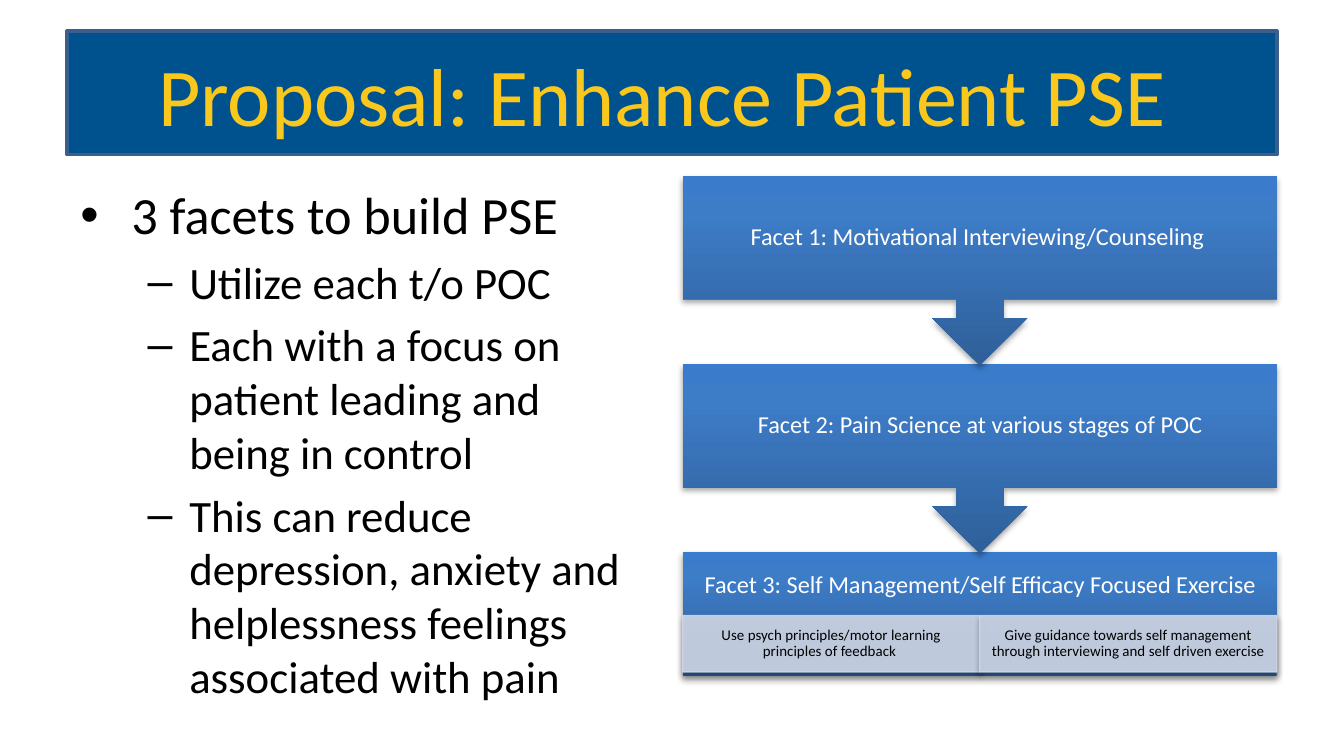
"""Build a slide proposing three facets for enhancing patient PSE."""
from typing import NamedTuple

from lxml import etree
from pptx import Presentation
from pptx.dml.color import RGBColor
from pptx.enum.shapes import MSO_SHAPE
from pptx.enum.text import MSO_ANCHOR, PP_ALIGN
from pptx.oxml.ns import qn
from pptx.util import Inches, Pt

RECTANGLE = MSO_SHAPE.RECTANGLE
CALLOUT = MSO_SHAPE.UP_ARROW_CALLOUT
CENTER, LEFT = PP_ALIGN.CENTER, PP_ALIGN.LEFT
MIDDLE, TOP = MSO_ANCHOR.MIDDLE, MSO_ANCHOR.TOP

FONT = "Calibri"
SLIDE_WIDTH = 10
SLIDE_HEIGHT = SLIDE_WIDTH * 9 / 16
GRADIENT = ((0, "2F5F99"), (80, "3D7CC7"), (100, "3A7CCB"))
DETAIL_COLOR = "D0D8E8"
FLOW_LEFT, FLOW_TOP, FLOW_WIDTH = 5.08, 1.31, 4.42
STEP, CALLOUT_HEIGHT, BOX_HEIGHT = 1.4, 1.41, 0.92
DETAIL_TOP, DETAIL_HEIGHT = 4.58, 0.42


class Box(NamedTuple):
    """A rectangle in inches."""
    left: float
    top: float
    width: float
    height: float


class Bullet(NamedTuple):
    """One bulleted line of the body."""
    text: str
    level: int = 1


class BulletStyle(NamedTuple):
    """The look of one bullet level."""
    mark: str
    size: float
    margin: float
    hanging: float


STYLES = (BulletStyle("•", 28, 0.38, 0.38), BulletStyle("–", 24, 0.81, 0.31))
BULLETS = (
    Bullet("3 facets to build PSE", 0),
    Bullet("Utilize each t/o POC"),
    Bullet("Each with a focus on patient leading and being in control"),
    Bullet("This can reduce depression, anxiety and helplessness feelings associated with pain"),
)
FACETS = (
    "Facet 1: Motivational Interviewing/Counseling ",
    "Facet 2: Pain Science at various stages of POC",
    "Facet 3: Self Management/Self Efficacy Focused Exercise",
)
DETAILS = (
    "Use psych principles/motor learning principles of feedback ",
    "Give guidance towards self management through interviewing and self driven exercise",
)


def color(value: str) -> RGBColor:
    """Turn a hex string into a colour."""
    return RGBColor.from_string(value)


def lengths(box: Box) -> list:
    """Give the sides of a box as lengths."""
    return [Inches(side) for side in box]


def add_shape(slide, kind, box: Box):
    """Add a preset shape without a shadow."""
    shape = slide.shapes.add_shape(kind, *lengths(box))
    shape.shadow.inherit = False
    return shape


def add_shadow(shape) -> None:
    """Give a shape a soft shadow below it."""
    effects = shape.element.spPr.find(qn("a:effectLst"))
    shadow = etree.SubElement(effects, qn("a:outerShdw"), blurRad=str(Pt(3.1)),
                              dist=str(Pt(1.8)), dir="5400000", rotWithShape="0")
    black = etree.SubElement(shadow, qn("a:srgbClr"), val="000000")
    etree.SubElement(black, qn("a:alpha"), val="35000")


def add_gradient_shape(slide, kind, box: Box, rotation: float = 0) -> None:
    """Add a shape with the vertical blue gradient."""
    shape = add_shape(slide, kind, box)
    shape.rotation = rotation
    shape.line.fill.background()
    shape.fill.gradient()
    shape.fill.gradient_angle = 90
    gradient = shape.element.spPr.find(qn("a:gradFill"))
    gradient.set("rotWithShape", "0")
    stops = gradient.find(qn("a:gsLst"))
    for stop in list(stops):
        stops.remove(stop)
    for position, value in GRADIENT:
        stop = etree.SubElement(stops, qn("a:gs"), pos=str(position * 1000))
        etree.SubElement(stop, qn("a:srgbClr"), val=value)
    add_shadow(shape)


def set_bullet(paragraph, style: BulletStyle) -> None:
    """Give a paragraph its bullet and hanging indent."""
    properties = paragraph._p.get_or_add_pPr()
    properties.set("marL", str(Inches(style.margin)))
    properties.set("indent", str(-Inches(style.hanging)))
    etree.SubElement(properties, qn("a:buFont"), typeface="Arial")
    etree.SubElement(properties, qn("a:buChar"), char=style.mark)


def write(paragraph, text: str, *, size: float, fill: str = "000000",
          align=CENTER, spacing: float = 1.0) -> None:
    """Write formatted text into a paragraph."""
    paragraph.alignment = align
    paragraph.line_spacing = spacing
    run = paragraph.add_run()
    run.text = text
    run.font.name = FONT
    run.font.size = Pt(size)
    run.font.color.rgb = color(fill)


def set_frame(shape, inset_x: float = 0.1, inset_y: float = 0.05, anchor=MIDDLE):
    """Set wrapping, insets and anchor, and return the text frame."""
    frame = shape.text_frame
    frame.word_wrap = True
    frame.margin_left = frame.margin_right = Inches(inset_x)
    frame.margin_top = frame.margin_bottom = Inches(inset_y)
    frame.vertical_anchor = anchor
    return frame


def add_title(slide) -> None:
    """Add the title bar and its text."""
    bar = add_shape(slide, RECTANGLE, Box(0.5, 0.23, 9, 0.92))
    bar.fill.solid()
    bar.fill.fore_color.rgb = color("00528F")
    bar.line.color.rgb = color("3A5F8C")
    bar.line.width = Pt(2)
    title = slide.shapes.add_textbox(*lengths(Box(0.5, 0.23, 9, 0.94)))
    write(set_frame(title).paragraphs[0], "Proposal: Enhance Patient PSE ",
          size=44, fill="FAC71C")


def add_body(slide) -> None:
    """Add the bulleted list."""
    body = slide.shapes.add_textbox(*lengths(Box(0.5, FLOW_TOP, 4.42, 3.71)))
    frame = set_frame(body, anchor=TOP)
    for index, bullet in enumerate(BULLETS):
        style = STYLES[bullet.level]
        paragraph = frame.add_paragraph() if index else frame.paragraphs[0]
        paragraph.level = bullet.level
        set_bullet(paragraph, style)
        paragraph.space_before = Pt(style.size * 0.2 if index else 0)
        write(paragraph, bullet.text, size=style.size, align=LEFT)


def add_facet(slide, index: int) -> None:
    """Add one step of the flow; the last one is a plain box."""
    last = index == len(FACETS) - 1
    top = FLOW_TOP + index * STEP
    height = BOX_HEIGHT if last else CALLOUT_HEIGHT
    add_gradient_shape(slide, RECTANGLE if last else CALLOUT,
                       Box(FLOW_LEFT, top, FLOW_WIDTH, height), 0 if last else 180)
    label = slide.shapes.add_textbox(
        *lengths(Box(FLOW_LEFT, top, FLOW_WIDTH, 0.5 if last else BOX_HEIGHT)))
    write(set_frame(label, inset_y=0.1).paragraphs[0], FACETS[index],
          size=13, fill="FFFFFF", spacing=0.9)


def add_detail(slide, index: int) -> None:
    """Add one pale box under the last facet."""
    width = FLOW_WIDTH / len(DETAILS)
    shape = add_shape(slide, RECTANGLE,
                      Box(FLOW_LEFT + index * width, DETAIL_TOP, width, DETAIL_HEIGHT))
    shape.line.width = Pt(0.75)
    for fill in (shape.fill, shape.line.fill):
        fill.solid()
        fill.fore_color.rgb = color(DETAIL_COLOR)
    for tint in shape.element.spPr.iter(qn("a:srgbClr")):
        etree.SubElement(tint, qn("a:alpha"), val="90000")
    add_shadow(shape)
    write(set_frame(shape, 0.06, 0.01).paragraphs[0], DETAILS[index], size=8, spacing=0.9)


def main() -> None:
    """Build and save the presentation."""
    presentation = Presentation()
    presentation.slide_width = Inches(SLIDE_WIDTH)
    presentation.slide_height = Inches(SLIDE_HEIGHT)
    slide = presentation.slides.add_slide(presentation.slide_layouts[6])
    add_title(slide)
    add_body(slide)
    add_facet(slide, 2)
    for index in range(len(DETAILS)):
        add_detail(slide, index)
    for index in (1, 0):
        add_facet(slide, index)
    presentation.save("out.pptx")


if __name__ == "__main__":
    main()
